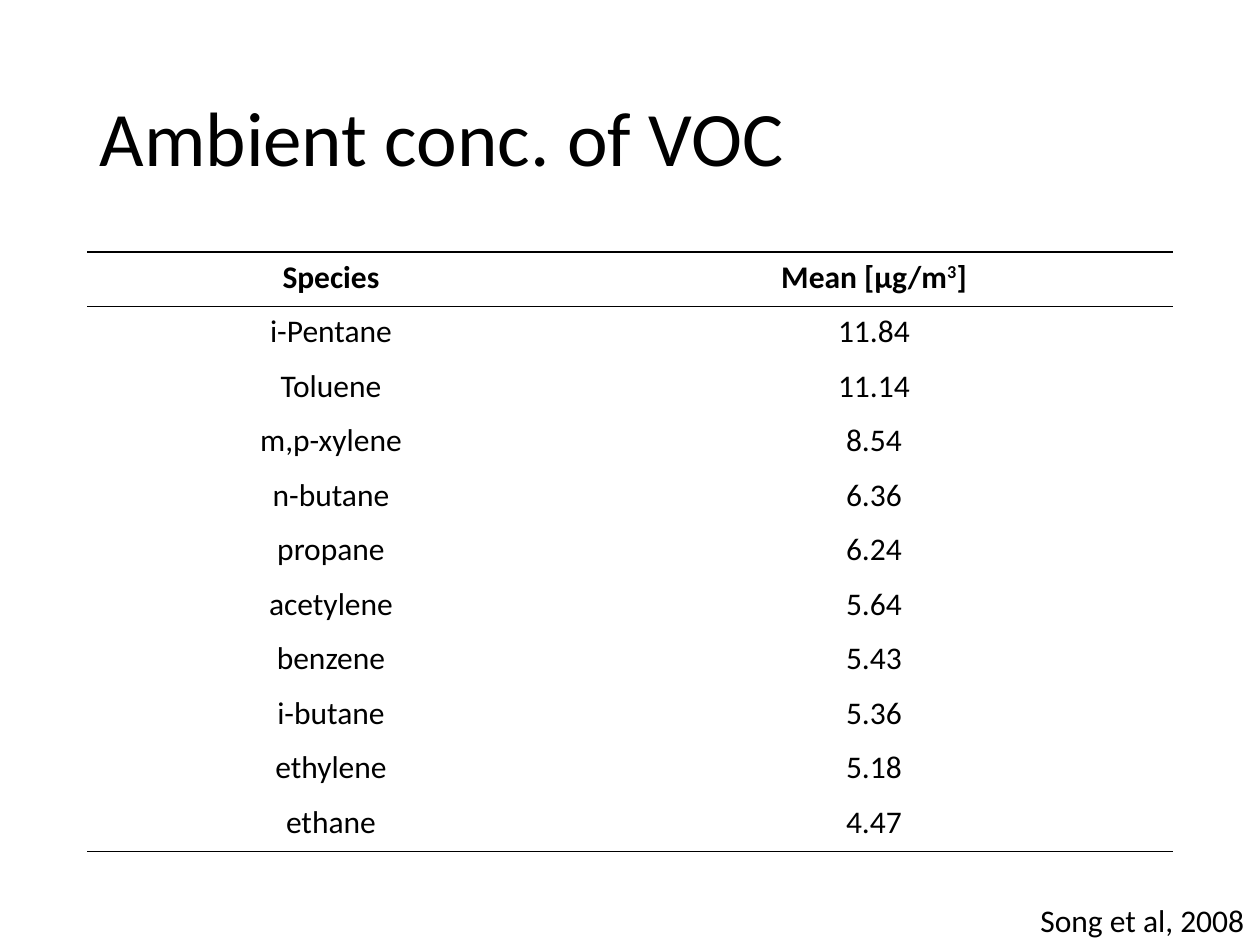
from typing import NamedTuple

import pptx
import pptx.dml.color
import pptx.enum.text
import pptx.oxml
import pptx.oxml.ns
import pptx.util

PX_PER_INCH = 126
BLACK = pptx.dml.color.RGBColor(0x00, 0x00, 0x00)
WHITE = pptx.dml.color.RGBColor(0xFF, 0xFF, 0xFF)
FONT = "Calibri"
NO_STYLE_NO_GRID = "{2D5ABB26-0587-4C30-8999-92F81FD0307C}"
ALIGN = pptx.enum.text.PP_ALIGN
ANCHOR = pptx.enum.text.MSO_ANCHOR


class Box(NamedTuple):
    left: int
    top: int
    width: int
    height: int


class Measurement(NamedTuple):
    species: str
    mean: str


TITLE_BOX = Box(87, 50, 1086, 183)
TABLE_BOX = Box(87, 252, 1086, 600)
CITATION_BOX = Box(1028, 895, 232, 50)
SPECIES_WIDTH = 488
CELL_SIDE_MARGIN = 25

HEADER = Measurement("Species", "Mean [μg/m^3^]")
MEASUREMENTS = [
    Measurement("i-Pentane", "11.84"),
    Measurement("Toluene", "11.14"),
    Measurement("m,p-xylene", "8.54"),
    Measurement("n-butane", "6.36"),
    Measurement("propane", "6.24"),
    Measurement("acetylene", "5.64"),
    Measurement("benzene", "5.43"),
    Measurement("i-butane", "5.36"),
    Measurement("ethylene", "5.18"),
    Measurement("ethane", "4.47"),
]


def px(length: float) -> int:
    return round(length * pptx.util.Inches(1) / PX_PER_INCH)


def place(box: Box) -> tuple[int, ...]:
    return tuple(px(length) for length in box)


def write_text(frame, text: str, *, size: int = 18, bold: bool = False,
               align=ALIGN.LEFT, anchor=ANCHOR.TOP, wrap: bool = True,
               line_spacing: float = 1.0) -> None:
    """Fill the frame with one paragraph; text between ^ marks is superscript."""
    frame.word_wrap = wrap
    frame.vertical_anchor = anchor
    paragraph = frame.paragraphs[0]
    paragraph.alignment = align
    paragraph.line_spacing = line_spacing
    for index, part in enumerate(text.split("^")):
        run = paragraph.add_run()
        run.text = part
        run.font.name = FONT
        run.font.size = pptx.util.Pt(size)
        run.font.bold = bold
        run.font.color.rgb = BLACK
        if index % 2:
            run.font._element.set("baseline", "30000")


def add_border(cell, side: str) -> None:
    """Rule one side of a cell: T for top or B for bottom."""
    cell._tc.get_or_add_tcPr().append(pptx.oxml.parse_xml(
        f'<a:ln{side} {pptx.oxml.ns.nsdecls("a")} w="{pptx.util.Pt(1)}">'
        f'<a:solidFill><a:srgbClr val="{BLACK}"/></a:solidFill></a:ln{side}>'))


def add_title(slide) -> None:
    title = slide.shapes.title
    title.left, title.top, title.width, title.height = place(TITLE_BOX)
    write_text(title.text_frame, "Ambient conc. of VOC", size=44,
               anchor=ANCHOR.MIDDLE, line_spacing=0.9)


def add_concentrations(slide) -> None:
    records = [HEADER, *MEASUREMENTS]
    frame = slide.shapes.add_table(len(records), len(HEADER), *place(TABLE_BOX))
    table = frame.table
    table.first_row = table.horz_banding = False
    table._tbl.tblPr.find(pptx.oxml.ns.qn("a:tableStyleId")).text = NO_STYLE_NO_GRID
    table.columns[0].width = px(SPECIES_WIDTH)
    table.columns[1].width = px(TABLE_BOX.width - SPECIES_WIDTH)

    for row, record in enumerate(records):
        is_header = row == 0
        table.rows[row].height = px(TABLE_BOX.height / len(records))
        for column, value in enumerate(record):
            cell = table.cell(row, column)
            cell.margin_left = cell.margin_right = px(CELL_SIDE_MARGIN)
            write_text(cell.text_frame, value, bold=is_header, align=ALIGN.CENTER)
            if is_header:
                add_border(cell, "T")
            if is_header or row == len(records) - 1:
                add_border(cell, "B")
            cell.fill.background()


def add_citation(slide) -> None:
    citation = slide.shapes.add_textbox(*place(CITATION_BOX))
    write_text(citation.text_frame, "Song et al, 2008", wrap=False)
    citation.text_frame.auto_size = pptx.enum.text.MSO_AUTO_SIZE.SHAPE_TO_FIT_TEXT


def main() -> None:
    presentation = pptx.Presentation()
    presentation.slide_width = pptx.util.Inches(10)
    presentation.slide_height = pptx.util.Inches(7.5)
    title_only = presentation.slide_layouts[5]
    slide = presentation.slides.add_slide(title_only)
    slide.background.fill.solid()
    slide.background.fill.fore_color.rgb = WHITE
    add_title(slide)
    add_concentrations(slide)
    add_citation(slide)
    presentation.save("out.pptx")


if __name__ == "__main__":
    main()
